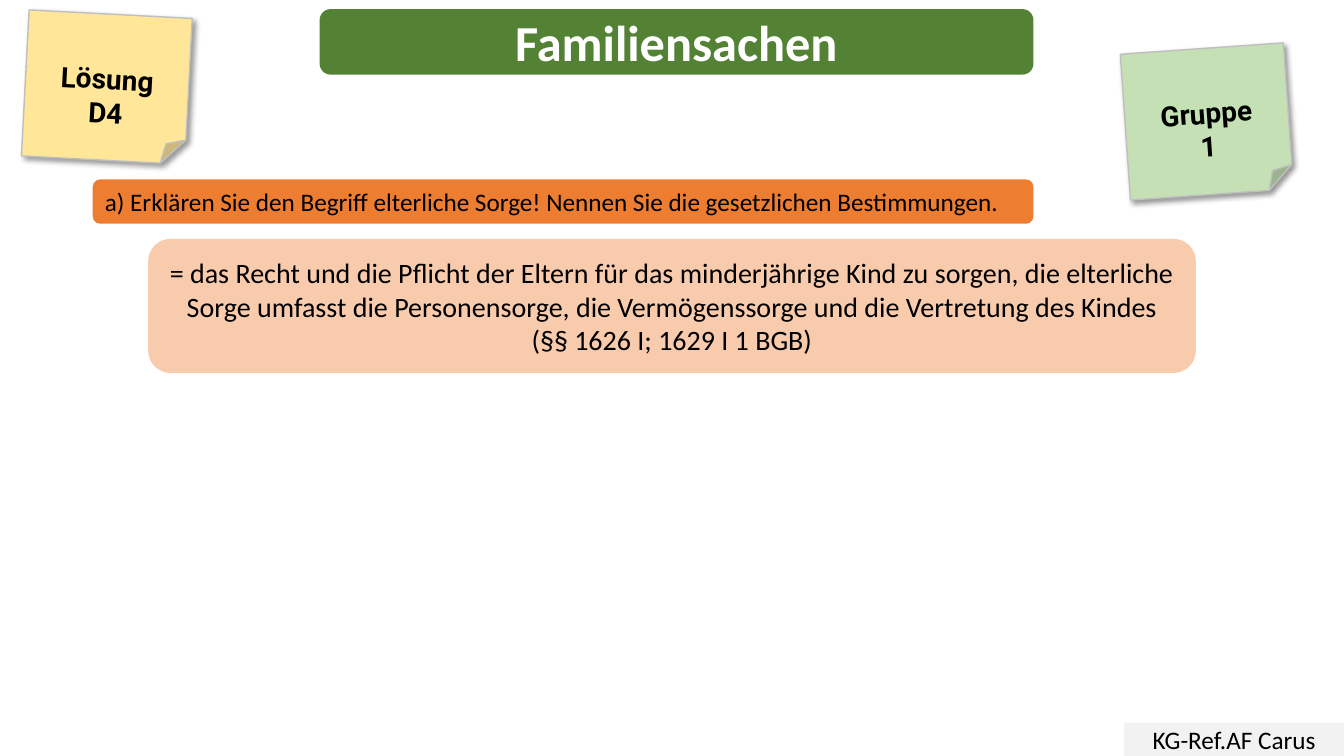
from lxml import etree
from pptx import Presentation
from pptx.dml.color import RGBColor
from pptx.enum import shapes, text
from pptx.oxml import ns
from pptx.util import Inches, Pt

GREEN = RGBColor(0x54, 0x82, 0x35)
ORANGE = RGBColor(0xED, 0x7D, 0x31)
PEACH = RGBColor(0xF8, 0xCB, 0xAD)
PALE_GREY = RGBColor(0xF2, 0xF2, 0xF2)
NOTE_YELLOW = RGBColor(0xFF, 0xE6, 0x99)
NOTE_GREEN = RGBColor(0xC5, 0xE0, 0xB4)
NOTE_EDGE = RGBColor(0xBF, 0xBF, 0xBF)
BLACK = RGBColor(0, 0, 0)
WHITE = RGBColor(0xFF, 0xFF, 0xFF)

RECT = shapes.MSO_SHAPE.RECTANGLE
ROUNDED = shapes.MSO_SHAPE.ROUNDED_RECTANGLE
FOLDED = shapes.MSO_SHAPE.FOLDED_CORNER
LEFT, CENTER = text.PP_ALIGN.LEFT, text.PP_ALIGN.CENTER

prs = Presentation()
prs.slide_width, prs.slide_height = Inches(13.33), Inches(7.5)
slide = prs.slides.add_slide(prs.slide_layouts[6])


def add_panel(kind, box, fill, lines, size, align=CENTER, face="Calibri", color=BLACK, bold=False):
    panel = slide.shapes.add_shape(kind, *map(Inches, box))
    panel.shadow.inherit = False
    panel.fill.solid()
    panel.fill.fore_color.rgb = fill
    panel.line.fill.background()
    frame = panel.text_frame
    frame.word_wrap = True
    frame.vertical_anchor = text.MSO_ANCHOR.MIDDLE
    for i, line in enumerate(lines):
        paragraph = frame.paragraphs[0] if i == 0 else frame.add_paragraph()
        paragraph.alignment = align
        run = paragraph.add_run()
        run.text = line
        run.font.name, run.font.size = face, Pt(size)
        run.font.bold, run.font.color.rgb = bold, color
    return panel


def add_sticky_note(left, top, rotation, fill, lines):
    note = add_panel(FOLDED, (left, top, 1.62, 1.45), fill, lines, 20, face="Roboto", bold=True)
    note.rotation = rotation
    note.line.color.rgb = NOTE_EDGE
    note.line.width = Pt(1)
    note.text_frame.margin_top = Inches(0.45)
    effects = note._element.spPr.find(ns.qn("a:effectLst"))
    shadow = etree.SubElement(effects, ns.qn("a:outerShdw"), blurRad=str(Pt(4)), dist=str(Pt(3)),
                              dir=str(45 * 60000), algn="tl", rotWithShape="0")
    shade = etree.SubElement(shadow, ns.qn("a:srgbClr"), val=str(BLACK))
    etree.SubElement(shade, ns.qn("a:alpha"), val="40000")


add_panel(ROUNDED, (3.17, 0.09, 7.08, 0.65), GREEN, ["Familiensachen"], 36, color=WHITE, bold=True)
add_panel(RECT, (11.15, 7.17, 2.18, 0.33), PALE_GREY, ["KG-Ref.AF Carus"], 18)
add_sticky_note(0.25, 0.14, 3, NOTE_YELLOW, ["Lösung", "D4"])
add_panel(ROUNDED, (0.92, 1.78, 9.33, 0.44), ORANGE,
          ["a) Erklären Sie den Begriff elterliche Sorge! Nennen Sie die gesetzlichen Bestimmungen."],
          18, align=LEFT)
add_panel(ROUNDED, (1.47, 2.37, 10.39, 1.33), PEACH,
          ["= das Recht und die Pflicht der Eltern für das minderjährige Kind zu sorgen, die elterliche "
           "Sorge umfasst die Personensorge, die Vermögenssorge und die Vertretung des Kindes",
           "(§§ 1626 I; 1629 I 1 BGB)"], 20)
add_sticky_note(11.16, 0.48, 356, NOTE_GREEN, ["Gruppe", "1"])

prs.save("out.pptx")
